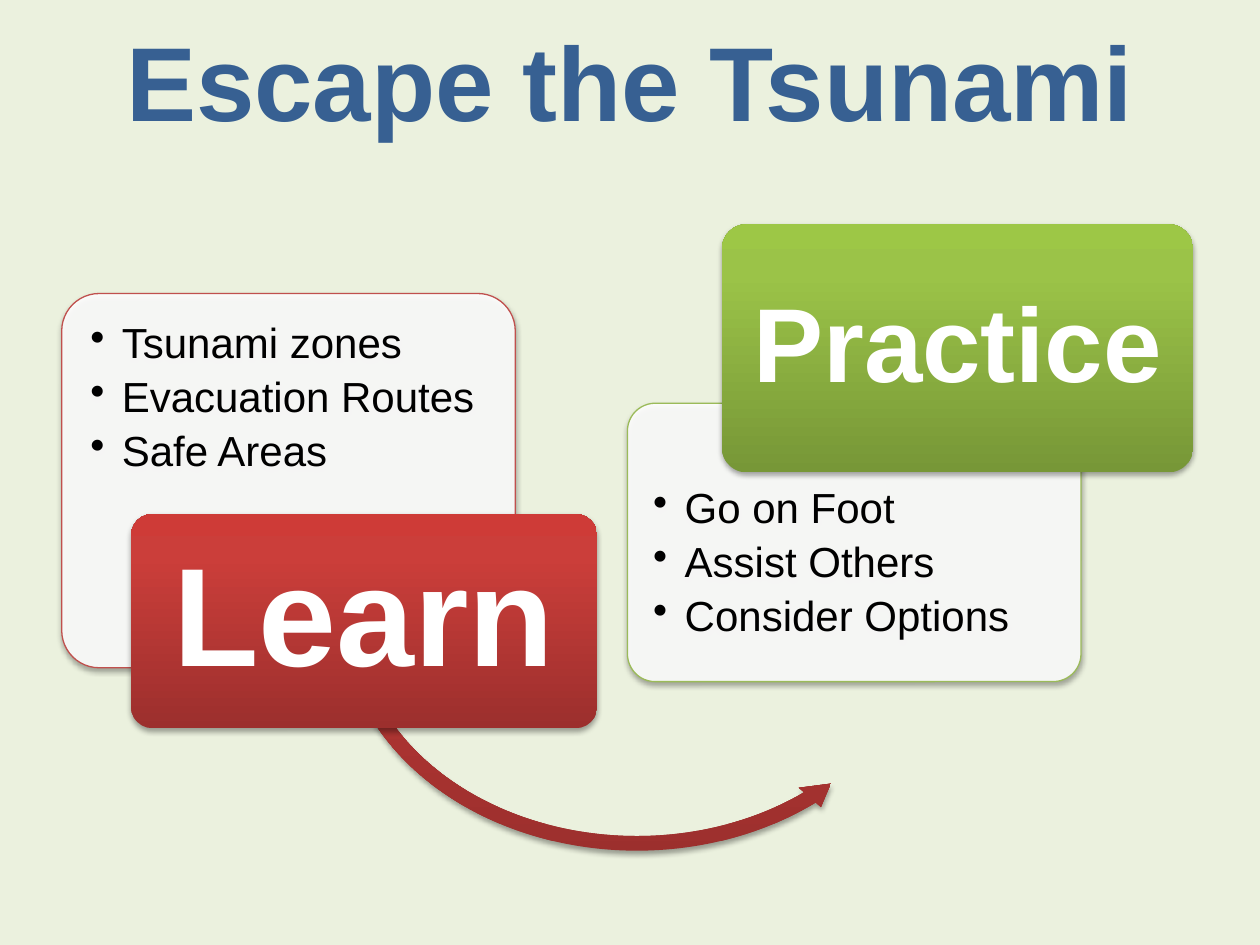
import pptx
import pptx.util
import pptx.dml.color
import pptx.enum.shapes
import pptx.enum.text
import pptx.oxml
import pptx.oxml.ns

Inches, Pt = pptx.util.Inches, pptx.util.Pt
Kind = pptx.enum.shapes.MSO_SHAPE
Align = pptx.enum.text.PP_ALIGN
Anchor = pptx.enum.text.MSO_ANCHOR
NS = pptx.oxml.ns.nsdecls("a")

THEME = {
    "font": "Arial", "back": "EBF1DE", "title": "376092", "ink": "000000", "light": "FFFFFF",
    "red": {"line": "C0504D", "stops": ((0, "9C2F2D"), (80, "CB3E3A"), (100, "CE3B37"))},
    "green": {"line": "9BBB59", "stops": ((0, "779737"), (80, "9BC348"), (100, "9DC746"))},
    "head": 60, "body": 24,
}
TITLE = "Escape the Tsunami"
ARROW = {"box": (2.65, 2.93, 4.81, 3.88), "turn": (0.03, 3.3, 28.04, 97.24, 0.03)}
STEPS = [
    {"name": "Learn", "size": 80, "tone": "red",
     "card": (0.49, 2.33, 3.6, 2.97), "label": (1.04, 4.08, 3.7, 1.7),
     "pad": (0.14, 0.14, 0.14, 0.75),
     "items": ["Tsunami zones", "Evacuation Routes", "Safe Areas"]},
    {"name": "Practice", "size": 60, "tone": "green",
     "card": (4.98, 3.2, 3.6, 2.21), "label": (5.73, 1.78, 3.74, 1.97),
     "pad": (0.14, 0.6, 0.14, 0.14),
     "items": ["Go on Foot", "Assist Others", "Consider Options"]},
]


def rgb(code):
    return pptx.dml.color.RGBColor.from_string(code)


def write(shape, lines, size, color, bold=False, align=Align.CENTER,
          anchor=Anchor.MIDDLE, pad=(0.1, 0.05, 0.1, 0.05), bullet=False, pitch=0.9):
    frame = shape.text_frame
    frame.word_wrap = True
    frame.vertical_anchor = anchor
    frame.margin_left, frame.margin_top, frame.margin_right, frame.margin_bottom = map(Inches, pad)
    frame.text = "\n".join(lines)
    for para in frame.paragraphs:
        para.alignment = align
        para.line_spacing = pitch
        font = para.runs[0].font
        font.name, font.size, font.bold = THEME["font"], Pt(size), bold
        font.color.rgb = rgb(color)
        if bullet:
            para.space_after = Pt(5)
            props = para._p.get_or_add_pPr()
            props.set("marL", str(Inches(0.25)))
            props.set("indent", str(-Inches(0.25)))
            props.append(pptx.oxml.parse_xml(f'<a:buChar {NS} char="•"/>'))


def shade(shape):
    shape.shadow.inherit = False
    glow = shape._element.spPr.find(pptx.oxml.ns.qn("a:effectLst"))
    glow.append(pptx.oxml.parse_xml(
        f'<a:outerShdw {NS} blurRad="{Pt(3.1)}" dist="{Pt(1.8)}" dir="5400000" rotWithShape="0">'
        '<a:srgbClr val="000000"><a:alpha val="35000"/></a:srgbClr></a:outerShdw>'))


def draw(slide, kind, box, turn):
    shape = slide.shapes.add_shape(kind, *map(Inches, box))
    for i, value in enumerate(turn):
        shape.adjustments[i] = value
    shade(shape)
    return shape


def blend(shape, tone):
    shape.line.fill.background()
    shape.fill.gradient()
    fill = shape._element.spPr.find(pptx.oxml.ns.qn("a:gradFill"))
    stops = "".join(f'<a:gs pos="{at * 1000}"><a:srgbClr val="{code}"/></a:gs>'
                    for at, code in THEME[tone]["stops"])
    fill.getparent().replace(fill, pptx.oxml.parse_xml(
        f'<a:gradFill {NS} rotWithShape="1"><a:gsLst>{stops}</a:gsLst>'
        '<a:lin ang="16200000" scaled="0"/></a:gradFill>'))


def card(slide, step):
    shape = draw(slide, Kind.ROUNDED_RECTANGLE, step["card"], [0.1])
    shape.fill.solid()
    shape.fill.fore_color.rgb = rgb(THEME["light"])
    tint = shape._element.spPr.find(pptx.oxml.ns.qn("a:solidFill"))[0]
    tint.append(pptx.oxml.parse_xml(f'<a:alpha {NS} val="90000"/>'))
    shape.line.color.rgb = rgb(THEME[step["tone"]]["line"])
    shape.line.width = Pt(0.75)
    write(shape, step["items"], THEME["body"], THEME["ink"], align=Align.LEFT,
          anchor=Anchor.TOP, pad=step["pad"], bullet=True)


def label(slide, step):
    shape = draw(slide, Kind.ROUNDED_RECTANGLE, step["label"], [0.1])
    blend(shape, step["tone"])
    write(shape, [step["name"]], step["size"], THEME["light"], bold=True,
          pad=(0.12, 0.08, 0.12, 0.08))


def main():
    deck = pptx.Presentation()
    deck.slide_width, deck.slide_height = Inches(10), Inches(7.5)
    slide = deck.slides.add_slide(deck.slide_layouts[5])
    slide.background.fill.solid()
    slide.background.fill.fore_color.rgb = rgb(THEME["back"])
    title = slide.shapes.title
    title.left, title.top, title.width, title.height = map(Inches, (0, 0.01, 10, 1.25))
    write(title, [TITLE], THEME["head"], THEME["title"], bold=True, pitch=1.0)
    for step in STEPS:
        card(slide, step)
        if step is STEPS[0]:
            arrow = draw(slide, Kind.LEFT_CIRCULAR_ARROW, ARROW["box"], ARROW["turn"])
            blend(arrow, step["tone"])
        label(slide, step)
    deck.save("out.pptx")


if __name__ == "__main__":
    main()
